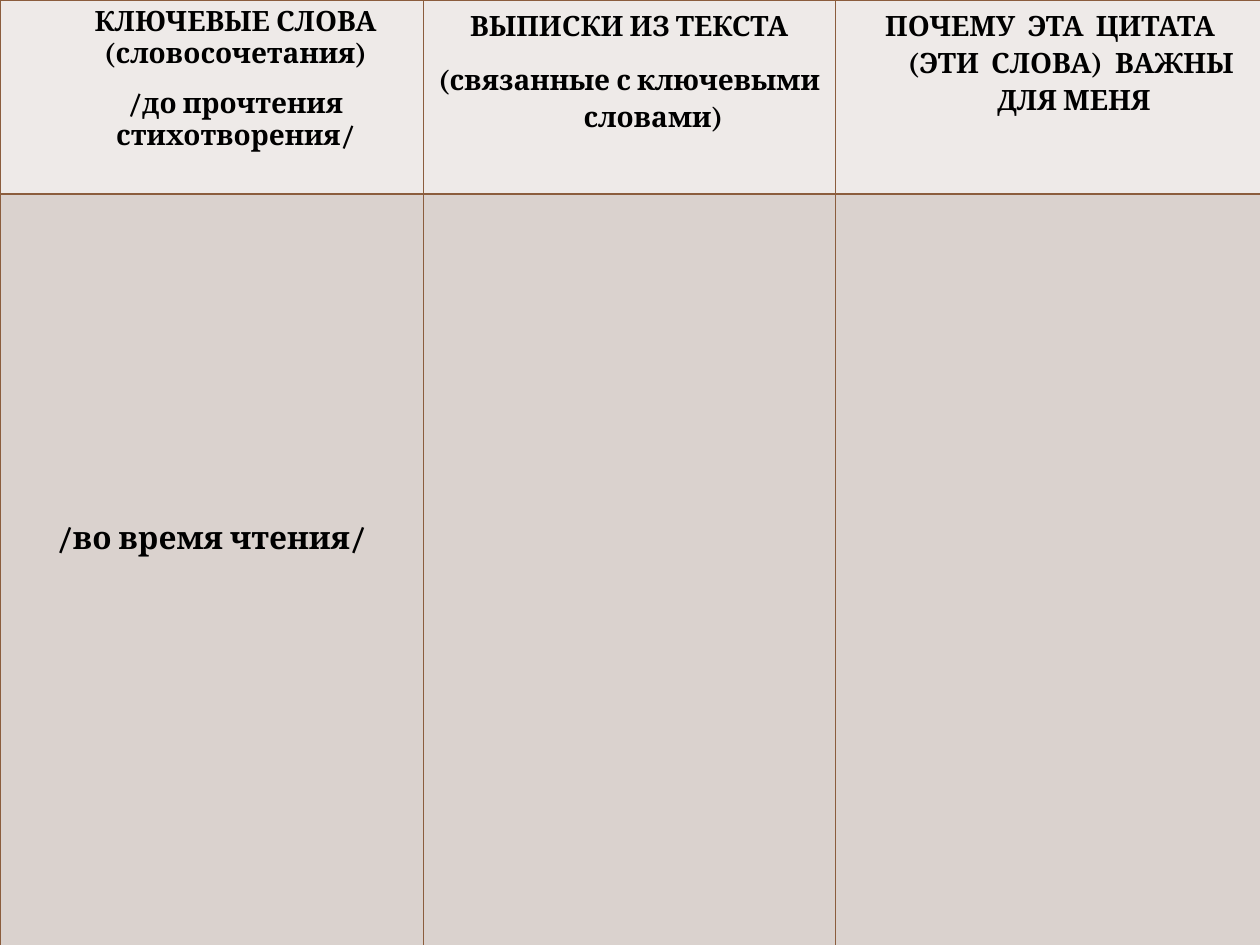
"""Build a three-column reading worksheet slide as one table."""
from lxml import etree
from pptx import Presentation
from pptx.dml.color import RGBColor
from pptx.enum.text import PP_ALIGN
from pptx.oxml.ns import qn
from pptx.util import Inches, Pt

CENTER = PP_ALIGN.CENTER

HEADERS = [
    {"lines": ["КЛЮЧЕВЫЕ СЛОВА\v(словосочетания)", "/до прочтения стихотворения/"],
     "hanging": 0, "spacing": 1.0},
    {"lines": ["ВЫПИСКИ ИЗ ТЕКСТА", "(связанные с ключевыми словами)"],
     "hanging": 0.38, "spacing": 1.15},
    {"lines": ["ПОЧЕМУ  ЭТА  ЦИТАТА (ЭТИ  СЛОВА)  ВАЖНЫ  ДЛЯ МЕНЯ"],
     "hanging": 0.38, "spacing": 1.15},
]
READING_STAGE = "/во время чтения/"

COLUMN_WIDTHS = [3.36, 3.27, 3.41]
ROW_HEIGHTS = [1.54, 6.47]
HEADER_INDENT = 0.38
STAGE_TOP = 2.6

THEME = {
    "font": "Cambria",
    "text": "000000",
    "border": "8B5D3D",
    "row_fills": ["EEEAE8", "DAD2CE"],
    "header_size": 16,
    "stage_size": 18,
    "space_after": 10,
    "border_width": 1,
}


def style_cell(cell, fill):
    properties = cell._tc.get_or_add_tcPr()
    for side in ("a:lnL", "a:lnR", "a:lnT", "a:lnB"):
        line = etree.SubElement(properties, qn(side), w=str(Pt(THEME["border_width"])))
        solid = etree.SubElement(line, qn("a:solidFill"))
        etree.SubElement(solid, qn("a:srgbClr"), val=THEME["border"])
    cell.fill.solid()
    cell.fill.fore_color.rgb = RGBColor.from_string(fill)


def write_paragraph(para, text, size):
    para.text = text
    para.alignment = CENTER
    for span in para.runs:
        span.font.name = THEME["font"]
        span.font.size = Pt(size)
        span.font.bold = True
        span.font.color.rgb = RGBColor.from_string(THEME["text"])


def write_header(cell, header):
    frame = cell.text_frame
    for index, text in enumerate(header["lines"]):
        para = frame.add_paragraph() if index else frame.paragraphs[0]
        write_paragraph(para, text, THEME["header_size"])
        para.line_spacing = header["spacing"]
        para.space_after = Pt(THEME["space_after"])
        properties = para._p.get_or_add_pPr()
        properties.set("marL", str(Inches(HEADER_INDENT)))
        properties.set("indent", str(-Inches(header["hanging"])))


def main():
    deck = Presentation()
    deck.slide_width, deck.slide_height = Inches(10), Inches(7.5)
    page = deck.slides.add_slide(deck.slide_layouts[6])
    table = page.shapes.add_table(
        len(ROW_HEIGHTS), len(COLUMN_WIDTHS), 0, 0,
        Inches(sum(COLUMN_WIDTHS)), Inches(sum(ROW_HEIGHTS))).table
    for column, width in zip(table.columns, COLUMN_WIDTHS):
        column.width = Inches(width)
    for row, height, fill in zip(table.rows, ROW_HEIGHTS, THEME["row_fills"]):
        row.height = Inches(height)
        for cell in row.cells:
            style_cell(cell, fill)

    for cell, header in zip(table.rows[0].cells, HEADERS):
        write_header(cell, header)
    stage = table.cell(1, 0)
    stage.margin_top = Inches(STAGE_TOP)
    write_paragraph(stage.text_frame.paragraphs[0], READING_STAGE, THEME["stage_size"])
    deck.save("out.pptx")


if __name__ == "__main__":
    main()
